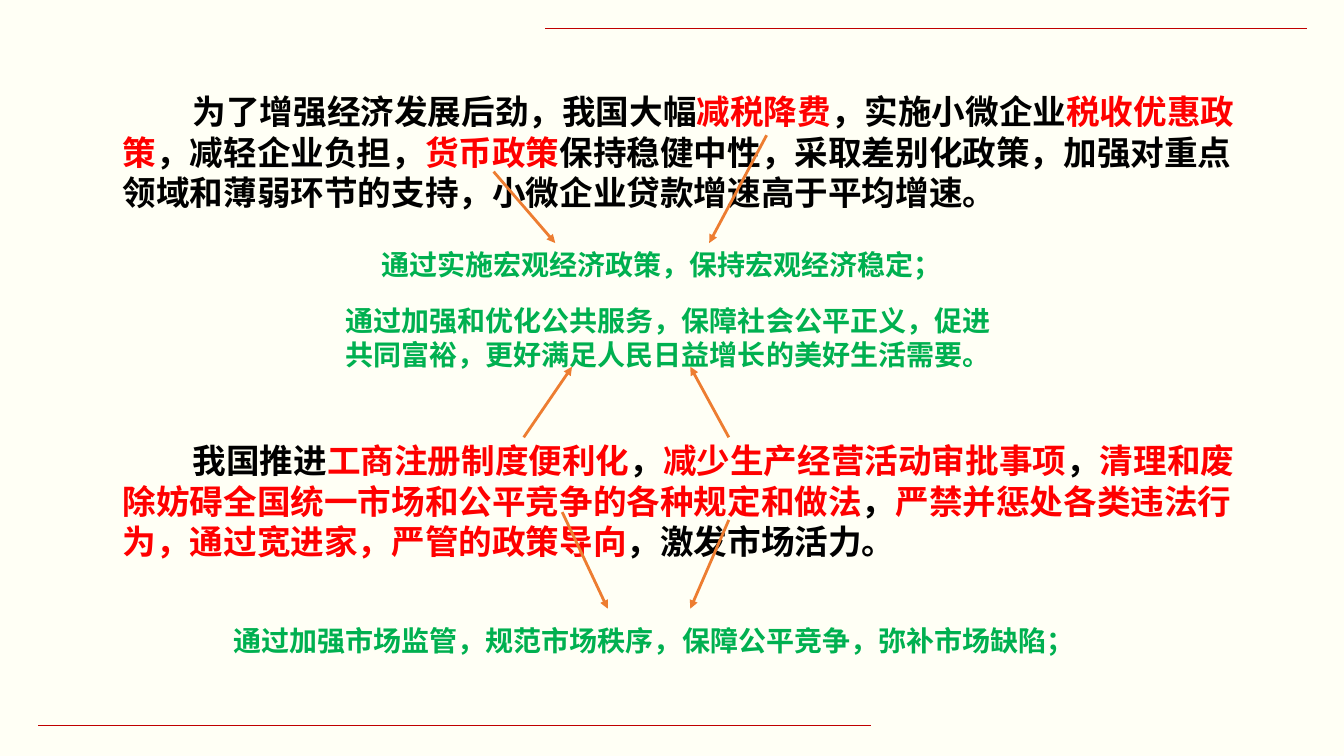
import pptx
import pptx.util
import pptx.dml.color
import pptx.enum.shapes
import pptx.enum.text
import pptx.oxml.ns
import lxml.etree

Pt = pptx.util.Pt
RGBColor = pptx.dml.color.RGBColor
qn = pptx.oxml.ns.qn
ALIGN = pptx.enum.text.PP_ALIGN

CREAM = RGBColor(0xFF, 0xFF, 0xF5)
BLACK = RGBColor(0x00, 0x00, 0x00)
RED = RGBColor(0xFF, 0x00, 0x00)
GREEN = RGBColor(0x00, 0xB0, 0x50)
ORANGE = RGBColor(0xED, 0x7D, 0x31)
DARK_RED = RGBColor(0xC0, 0x00, 0x00)
CHINESE_FONT = "Noto Sans CJK SC"

FISCAL_POLICY = [
    ("为了增强经济发展后劲，我国大幅", BLACK),
    ("减税降费", RED),
    ("，实施小微企业", BLACK),
    ("税收优惠政策", RED),
    ("，减轻企业负担，", BLACK),
    ("货币政策", RED),
    ("保持稳健中性，采取差别化政策，加强对重点领域和薄弱环节的支持，"
     "小微企业贷款增速高于平均增速。", BLACK),
]
MARKET_POLICY = [
    ("我国推进", BLACK),
    ("工商注册制度便利化", RED),
    ("，", BLACK),
    ("减少生产经营活动审批事项", RED),
    ("，", BLACK),
    ("清理和废除妨碍全国统一市场和公平竞争的各种规定和做法", RED),
    ("，", BLACK),
    ("严禁并惩处各类违法行为，通过宽进家，严管的政策导向", RED),
    ("，激发市场活力。", BLACK),
]
STABILITY = "通过实施宏观经济政策，保持宏观经济稳定；"
PUBLIC_SERVICE = "通过加强和优化公共服务，保障社会公平正义，促进共同富裕，更好满足人民日益增长的美好生活需要。"
SUPERVISION = "通过加强市场监管，规范市场秩序，保障公平竞争，弥补市场缺陷；"


def add_span(para, text, *, size, color, font):
    span = para.add_run()
    span.text = text
    span.font.size = Pt(size)
    span.font.bold = True
    span.font.name = font
    span.font.color.rgb = color
    east_asian = lxml.etree.SubElement(span.font._element, qn("a:ea"))
    east_asian.set("typeface", CHINESE_FONT)


def add_text(page, box, spans, *, size, leading, font=CHINESE_FONT,
             align=ALIGN.LEFT, indent=0):
    frame = page.shapes.add_textbox(*map(Pt, box)).text_frame
    frame.word_wrap = True
    para = frame.paragraphs[0]
    para.alignment = align
    para.line_spacing = Pt(leading)
    para._p.get_or_add_pPr().set("indent", str(Pt(indent)))
    for text, color in spans:
        add_span(para, text, size=size, color=color, font=font)


def add_policy(page, box, spans):
    add_text(page, box, spans, size=24, leading=29, font="Calibri", indent=50)


def add_conclusion(page, box, text, align=ALIGN.LEFT):
    add_text(page, box, [(text, GREEN)], size=20, leading=24, align=align)


def add_line(page, start, end, *, color, width, arrow=False):
    line = page.shapes.add_connector(
        pptx.enum.shapes.MSO_CONNECTOR.STRAIGHT, *map(Pt, start + end))
    line.line.color.rgb = color
    line.line.width = Pt(width)
    if arrow:
        head = lxml.etree.SubElement(line.line._get_or_add_ln(), qn("a:tailEnd"))
        head.set("type", "triangle")
    lxml.etree.SubElement(line._element.spPr, qn("a:effectLst"))


def add_arrows(page, box, offsets):
    left, top, width, height = box
    for start, end in offsets:
        add_line(page, (left + start[0], top + start[1]),
                 (left + end[0], top + end[1]), color=ORANGE, width=2, arrow=True)


def add_frame_lines(page, box):
    left, top, width, height = box
    add_line(page, (left + 362, top), (left + width, top), color=DARK_RED, width=0.5)
    add_line(page, (left, top + height), (left + 595, top + height),
             color=DARK_RED, width=0.5)


def add_fiscal_region(page, box):
    left, top, width, height = box
    add_policy(page, (left, top, width, 95), FISCAL_POLICY)
    add_conclusion(page, (left + 183, top + 112, 418, 31), STABILITY, ALIGN.CENTER)
    add_arrows(page, box, [((272, 61.4), (316, 112.4)), ((467, 35.4), (426, 112.4))])
    add_conclusion(page, (left + 159, top + 152, 480, 55), PUBLIC_SERVICE)


def add_market_region(page, box):
    left, top, width, height = box
    add_policy(page, (left, top, width, 95), MARKET_POLICY)
    add_conclusion(page, (left + 79, top + 131.6, 640, 31), SUPERVISION)
    add_arrows(page, box, [
        ((440, 2), (412.5, -48.4)), ((293.5, 2), (328, -48.4)),
        ((321, 55.4), (353.5, 124.4)), ((440, 61), (412.5, 124.4)),
    ])


def main():
    deck = pptx.Presentation()
    deck.slide_width, deck.slide_height = Pt(960), Pt(540)
    page = deck.slides.add_slide(deck.slide_layouts[6])
    page.background.fill.solid()
    page.background.fill.fore_color.rgb = CREAM
    add_frame_lines(page, (27.5, 20.2, 906, 498))
    add_fiscal_region(page, (80.6, 61.2, 824, 207))
    add_market_region(page, (80.6, 310.4, 824, 163))
    deck.save("out.pptx")


if __name__ == "__main__":
    main()
